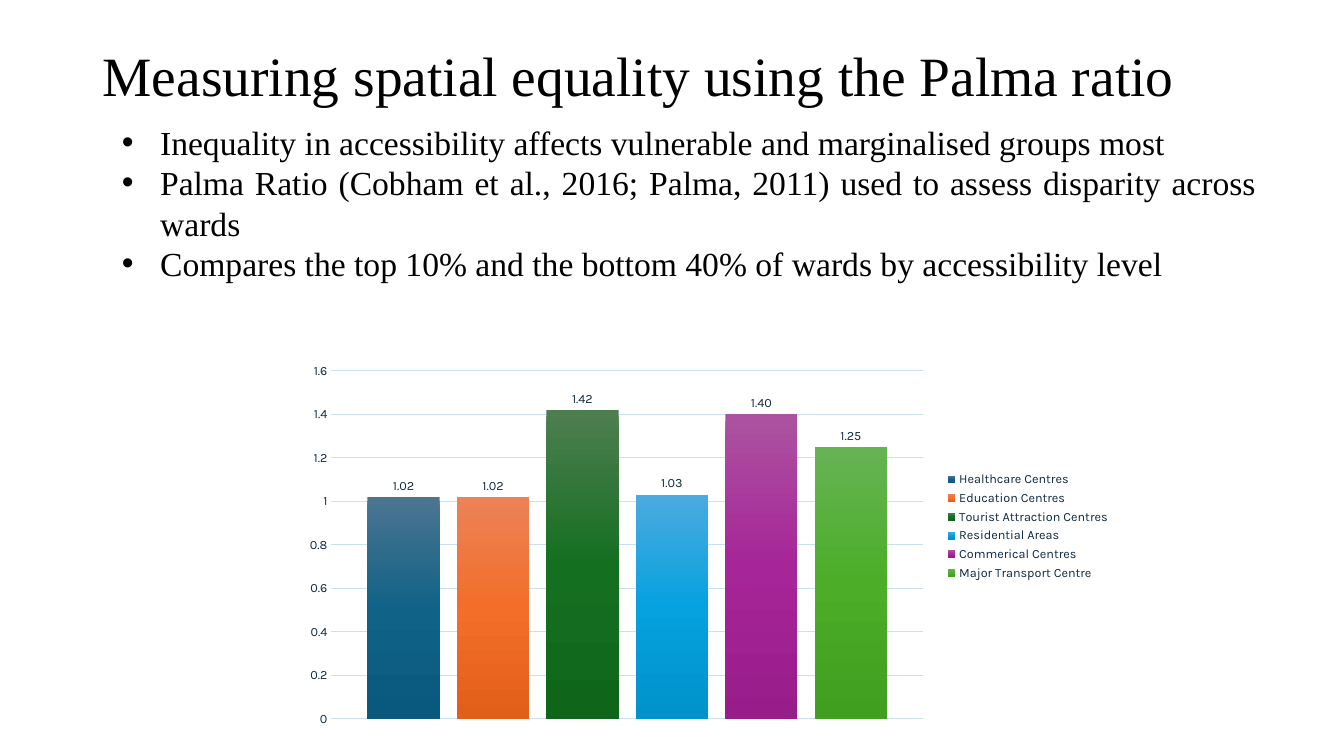
from copy import deepcopy

from lxml import etree
from pptx import Presentation, util as u
from pptx import oxml
from pptx.chart import data
from pptx.dml.color import RGBColor
from pptx.enum import chart as charts, text
from pptx.oxml import ns

BLACK = RGBColor(0x00, 0x00, 0x00)
NAVY = RGBColor(0x0E, 0x28, 0x41)
GRID = RGBColor(0xCA, 0xDF, 0xF4)
BLUE = [RGBColor(0x4C, 0x75, 0x91), RGBColor(0x10, 0x62, 0x87), RGBColor(0x09, 0x59, 0x7D)]
ORANGE = [RGBColor(0xED, 0x82, 0x57), RGBColor(0xF2, 0x6E, 0x29), RGBColor(0xE2, 0x5F, 0x1A)]
FOREST = [RGBColor(0x4D, 0x7E, 0x50), RGBColor(0x15, 0x6F, 0x21), RGBColor(0x0F, 0x66, 0x1B)]
SKY = [RGBColor(0x4C, 0xAA, 0xDF), RGBColor(0x05, 0xA2, 0xDF), RGBColor(0x00, 0x92, 0xCB)]
PURPLE = [RGBColor(0xAC, 0x53, 0xA0), RGBColor(0xA6, 0x25, 0x98), RGBColor(0x99, 0x1C, 0x8B)]
GREEN = [RGBColor(0x66, 0xB3, 0x54), RGBColor(0x4B, 0xAD, 0x28), RGBColor(0x40, 0x9F, 0x1E)]

TITLE = "Measuring spatial equality using the Palma ratio"
POINTS = [
    "Inequality in accessibility affects vulnerable and marginalised groups most",
    "Palma Ratio (Cobham et al., 2016; Palma, 2011) used to assess disparity across wards",
    "Compares the top 10% and the bottom 40% of wards by accessibility level",
]
PALMA_RATIOS = [
    ("Healthcare Centres", 1.02, BLUE),
    ("Education Centres", 1.02, ORANGE),
    ("Tourist Attraction Centres", 1.42, FOREST),
    ("Residential Areas", 1.03, SKY),
    ("Commerical Centres", 1.40, PURPLE),
    ("Major Transport Centre", 1.25, GREEN),
]
PLOT_AREA = {"x": 0.12, "y": 0.13, "w": 0.66, "h": 0.83}


def apply(target, values):
    """Set each attribute of the target from a dict of format values."""
    for name, value in values.items():
        setattr(target, name, value)


class PageBuilder:
    """Hold the text styles and the current page, and add elements to it."""

    def __init__(self, page):
        """Keep the page and define its fonts."""
        self.page = page
        self.title_font = {"name": "Times New Roman", "size": u.Pt(39.6)}
        self.body_font = {"name": "Times New Roman", "size": u.Pt(24)}
        self.chart_font = {"name": "Karla", "size": u.Pt(9)}

    def style(self, font, values, color):
        """Give a font its format values and colour."""
        apply(font, values)
        font.color.rgb = color

    def text_box(self, bounds, lines, font, frame_format, para_format):
        """Add a text box with one paragraph per line and return its paragraphs."""
        frame = self.page.shapes.add_textbox(*map(u.Inches, bounds)).text_frame
        apply(frame, {"word_wrap": True, **frame_format})
        frame.text = "\n".join(lines)
        for para in frame.paragraphs:
            apply(para, para_format)
            for span in para.runs:
                self.style(span.font, font, BLACK)
        return frame.paragraphs

    def title(self, bounds, line):
        """Add the page title."""
        self.text_box(bounds, [line], self.title_font,
                      {"vertical_anchor": text.MSO_ANCHOR.MIDDLE}, {"line_spacing": 0.9})

    def bullets(self, bounds, lines):
        """Add a justified bullet list."""
        paras = self.text_box(bounds, lines, self.body_font,
                              {"auto_size": text.MSO_AUTO_SIZE.SHAPE_TO_FIT_TEXT},
                              {"alignment": text.PP_ALIGN.JUSTIFY})
        indent = u.Inches(0.38)
        for para in paras:
            props = para._p.get_or_add_pPr()
            props.set("marL", str(indent))
            props.set("indent", str(-indent))
            etree.SubElement(props, ns.qn("a:buFont")).set("typeface", "Arial")
            etree.SubElement(props, ns.qn("a:buChar")).set("char", "•")

    def gradient(self, series, colors):
        """Fill a series from top to bottom with evenly spaced colours."""
        fill = series.format.fill
        fill.gradient()
        fill.gradient_angle = 270
        stops = series._element.find(".//" + ns.qn("a:gsLst"))
        stops.insert(1, deepcopy(stops[0]))
        for index, (stop, color) in enumerate(zip(fill.gradient_stops, colors)):
            stop.position = index / (len(colors) - 1)
            stop.color.rgb = color

    def place_plot(self, chart, area):
        """Fix the inner plot area as fractions of the chart."""
        layout = oxml.parse_xml(f"<c:layout {ns.nsdecls('c')}><c:manualLayout/></c:layout>")
        settings = {"layoutTarget": "inner", "xMode": "edge", "yMode": "edge", **area}
        for name, value in settings.items():
            etree.SubElement(layout[0], ns.qn(f"c:{name}")).set("val", str(value))
        chart._chartSpace.find(".//" + ns.qn("c:plotArea")).insert(0, layout)

    def columns(self, bounds, rows):
        """Add a clustered column chart with one series per row."""
        values = data.CategoryChartData()
        values.categories = ["1"]
        for name, value, _ in rows:
            values.add_series(name, [value])
        chart = self.page.shapes.add_chart(
            charts.XL_CHART_TYPE.COLUMN_CLUSTERED, *map(u.Inches, bounds), values).chart
        apply(chart, {"has_title": False, "has_legend": True})
        self.style(chart.font, self.chart_font, NAVY)
        apply(chart.legend, {"position": charts.XL_LEGEND_POSITION.RIGHT,
                             "include_in_layout": False})
        self.style(chart.legend.font, self.chart_font, NAVY)
        chart.category_axis.visible = False
        axis = chart.value_axis
        apply(axis, {"minimum_scale": 0, "maximum_scale": 1.6, "major_unit": 0.2,
                     "major_tick_mark": charts.XL_TICK_MARK.NONE})
        axis.format.line.fill.background()
        self.style(axis.tick_labels.font, self.chart_font, NAVY)
        grid = axis.major_gridlines.format.line
        grid.color.rgb = GRID
        grid.width = u.Pt(0.75)
        plot = chart.plots[0]
        apply(plot, {"gap_width": 100, "overlap": -24, "vary_by_categories": False})
        for series, (_, _, colors) in zip(plot.series, rows):
            self.gradient(series, colors)
            labels = series.data_labels
            apply(labels, {"show_value": True, "number_format": "0.00",
                           "number_format_is_linked": False,
                           "position": charts.XL_LABEL_POSITION.OUTSIDE_END})
            self.style(labels.font, self.chart_font, NAVY)
        self.place_plot(chart, PLOT_AREA)


def main():
    """Build and save the deck."""
    deck = Presentation()
    apply(deck, {"slide_width": u.Inches(13.33), "slide_height": u.Inches(7.5)})
    builder = PageBuilder(deck.slides.add_slide(deck.slide_layouts[6]))
    builder.title((0.92, 0.4, 11.86, 0.76), TITLE)
    builder.columns((2.22, 3.14, 8.89, 4.16), PALMA_RATIOS)
    builder.bullets((1.11, 1.16, 11.45, 1.72), POINTS)
    deck.save("out.pptx")


if __name__ == "__main__":
    main()
